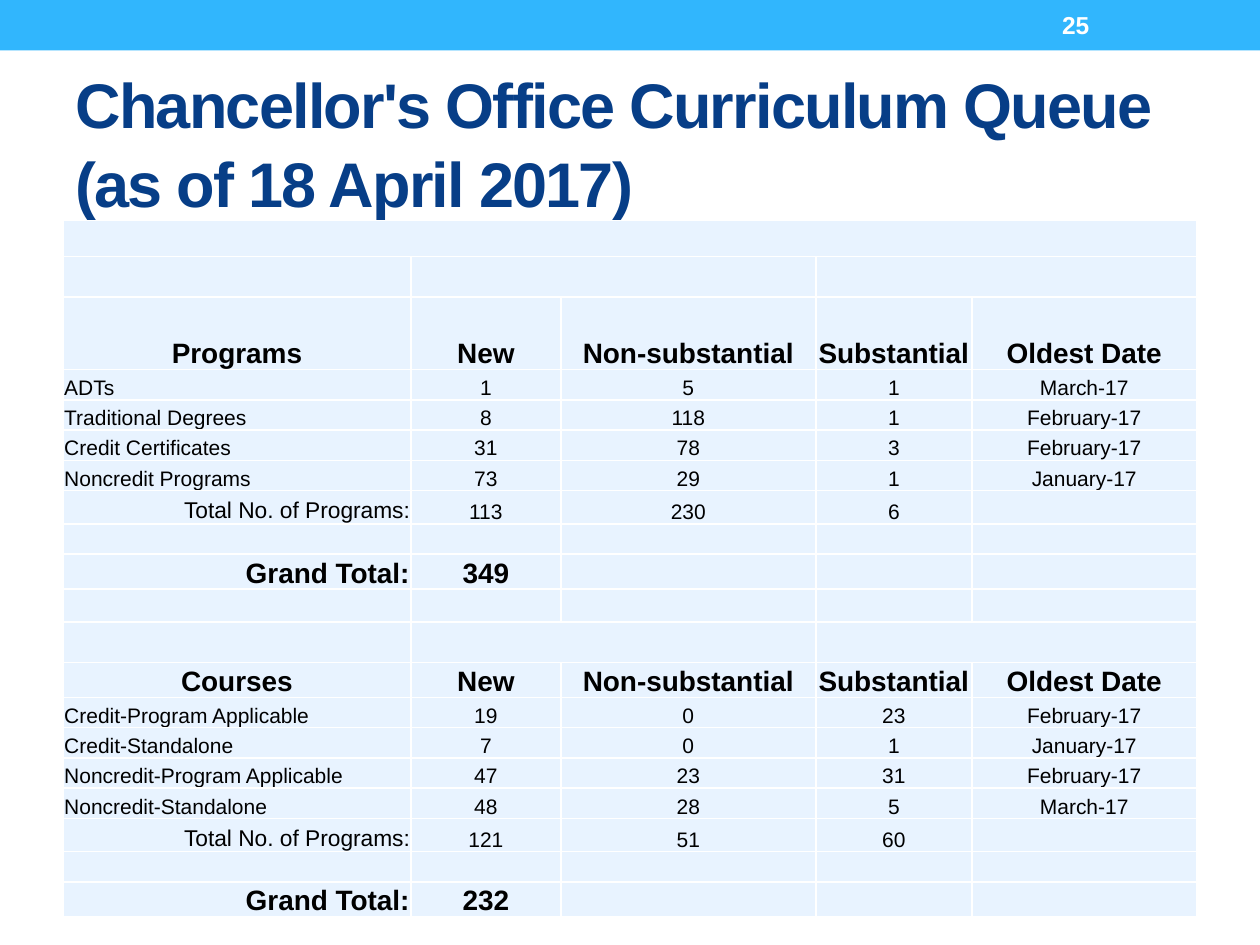
"""Build the curriculum queue slide with its table of programs and courses."""
import pptx
import pptx.dml.color
import pptx.enum.shapes
import pptx.enum.text
import pptx.oxml
import pptx.oxml.ns
import pptx.util
import lxml.etree

Pt = pptx.util.Pt
ALIGN = pptx.enum.text.PP_ALIGN
ANCHOR = pptx.enum.text.MSO_ANCHOR
COLORS = {"bar": "31B6FD", "title": "073E87", "cell": "E8F3FF", "white": "FFFFFF", "text": "000000"}
FONT = "Arial"


def rgb(name):
    return pptx.dml.color.RGBColor.from_string(COLORS[name])


def write_text(frame, text, size=12, color="text", bold=False, align=ALIGN.LEFT, spacing=0, line_spacing=None):
    paragraph = frame.paragraphs[0]
    paragraph.text = text
    paragraph.alignment = align
    paragraph.line_spacing = line_spacing
    for run in paragraph.runs:
        run.font.name = FONT
        run.font.size = Pt(size)
        run.font.bold = bold
        run.font.color.rgb = rgb(color)
        if spacing:
            run.font._element.set("spc", str(spacing * 100))
    if not text:
        ending = lxml.etree.SubElement(paragraph._p, pptx.oxml.ns.qn("a:endParaRPr"))
        ending.set("sz", str(size * 100))


presentation = pptx.Presentation()
presentation.slide_width = Pt(720)
presentation.slide_height = Pt(540)
slide = presentation.slides.add_slide(presentation.slide_layouts[6])

bar = slide.shapes.add_shape(pptx.enum.shapes.MSO_SHAPE.RECTANGLE, 0, 0, Pt(720), Pt(28.8))
bar.shadow.inherit = False
bar.fill.solid()
bar.fill.fore_color.rgb = rgb("bar")
bar.line.fill.background()

text_boxes = [
    ((36, 41.8, 648, 77.8), "Chancellor's Office Curriculum Queue\v(as of 18 April 2017)",
     {"size": 36, "color": "title", "bold": True, "spacing": -1, "line_spacing": 1.04}),
    ((599.8, 1.4, 84.2, 25.9), "25", {"size": 14, "color": "white", "bold": True}),
]
for box, text, text_format in text_boxes:
    shape = slide.shapes.add_textbox(*[Pt(length) for length in box])
    shape.text_frame.word_wrap = True
    shape.text_frame.vertical_anchor = ANCHOR.MIDDLE
    write_text(shape.text_frame, text, **text_format)

headings = ["New", "Non-substantial", "Substantial", "Oldest Date"]
sections = [
    ("Programs", 41.5, [
        ("ADTs", "1", "5", "1", "March-17"),
        ("Traditional Degrees", "8", "118", "1", "February-17"),
        ("Credit Certificates", "31", "78", "3", "February-17"),
        ("Noncredit Programs", "73", "29", "1", "January-17"),
    ], ["113", "230", "6"], "349"),
    ("Courses", 19, [
        ("Credit-Program Applicable", "19", "0", "23", "February-17"),
        ("Credit-Standalone", "7", "0", "1", "January-17"),
        ("Noncredit-Program Applicable", "47", "23", "31", "February-17"),
        ("Noncredit-Standalone", "48", "28", "5", "March-17"),
    ], ["121", "51", "60"], "232"),
]
rows = [("blank", 20.6, [])]
for name, heading_height, entries, totals, grand_total in sections:
    rows.append(("band", 23.1, []))
    rows.append(("heading", heading_height, [name, *headings]))
    rows += [("entry", 17.3, entry) for entry in entries]
    rows.append(("total", 19, ["Total No. of Programs:", *totals]))
    rows.append(("blank", 17.3, []))
    rows.append(("grand", 19, ["Grand Total:", grand_total]))
    rows.append(("blank", 19, []))
rows.pop()

column_widths = [198.8, 85.7, 145.7, 89.2, 128.5]
label_alignment = {"heading": ALIGN.CENTER, "total": ALIGN.RIGHT, "grand": ALIGN.RIGHT}
table_height = sum(height for kind, height, values in rows)
table = slide.shapes.add_table(len(rows), len(column_widths), Pt(36), Pt(126),
                               Pt(sum(column_widths)), Pt(table_height)).table
table.first_row = False
table.horz_banding = False
for column, width in zip(table.columns, column_widths):
    column.width = Pt(width)

for row_index, (kind, height, values) in enumerate(rows):
    table.rows[row_index].height = Pt(height)
    for column_index in range(len(column_widths)):
        cell = table.cell(row_index, column_index)
        cell.vertical_anchor = ANCHOR.BOTTOM
        cell.margin_left = cell.margin_right = cell.margin_top = Pt(0.72)
        cell.margin_bottom = 0
        text = values[column_index] if column_index < len(values) else ""
        is_label = column_index == 0
        bold = kind in ("heading", "grand") and bool(text)
        size = 16 if bold else 13 if kind == "total" and is_label else 12
        align = label_alignment.get(kind, ALIGN.LEFT) if is_label else ALIGN.CENTER
        write_text(cell.text_frame, text, size=size, bold=bold, align=align)
        properties = cell._tc.get_or_add_tcPr()
        for side in ("lnL", "lnR", "lnT", "lnB"):
            border = lxml.etree.SubElement(properties, pptx.oxml.ns.qn(f"a:{side}"), w="12700")
            border_fill = lxml.etree.SubElement(border, pptx.oxml.ns.qn("a:solidFill"))
            lxml.etree.SubElement(border_fill, pptx.oxml.ns.qn("a:srgbClr"), val=COLORS["white"])
        cell.fill.solid()
        cell.fill.fore_color.rgb = rgb("cell")
    if kind == "band":
        for first in (1, 3):
            table.cell(row_index, first).merge(table.cell(row_index, first + 1))
table.cell(0, 0).merge(table.cell(0, len(column_widths) - 1))

presentation.save("out.pptx")
